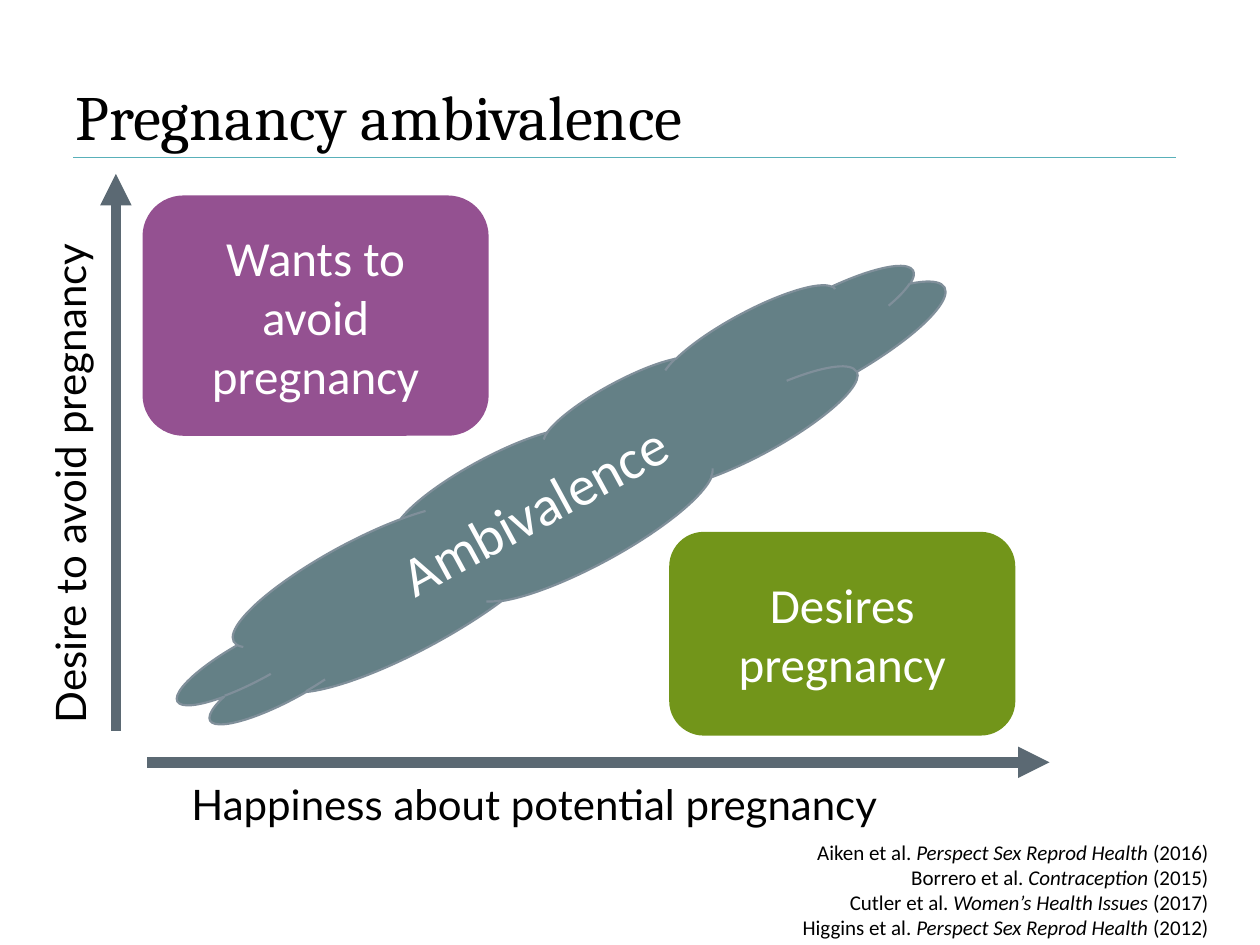
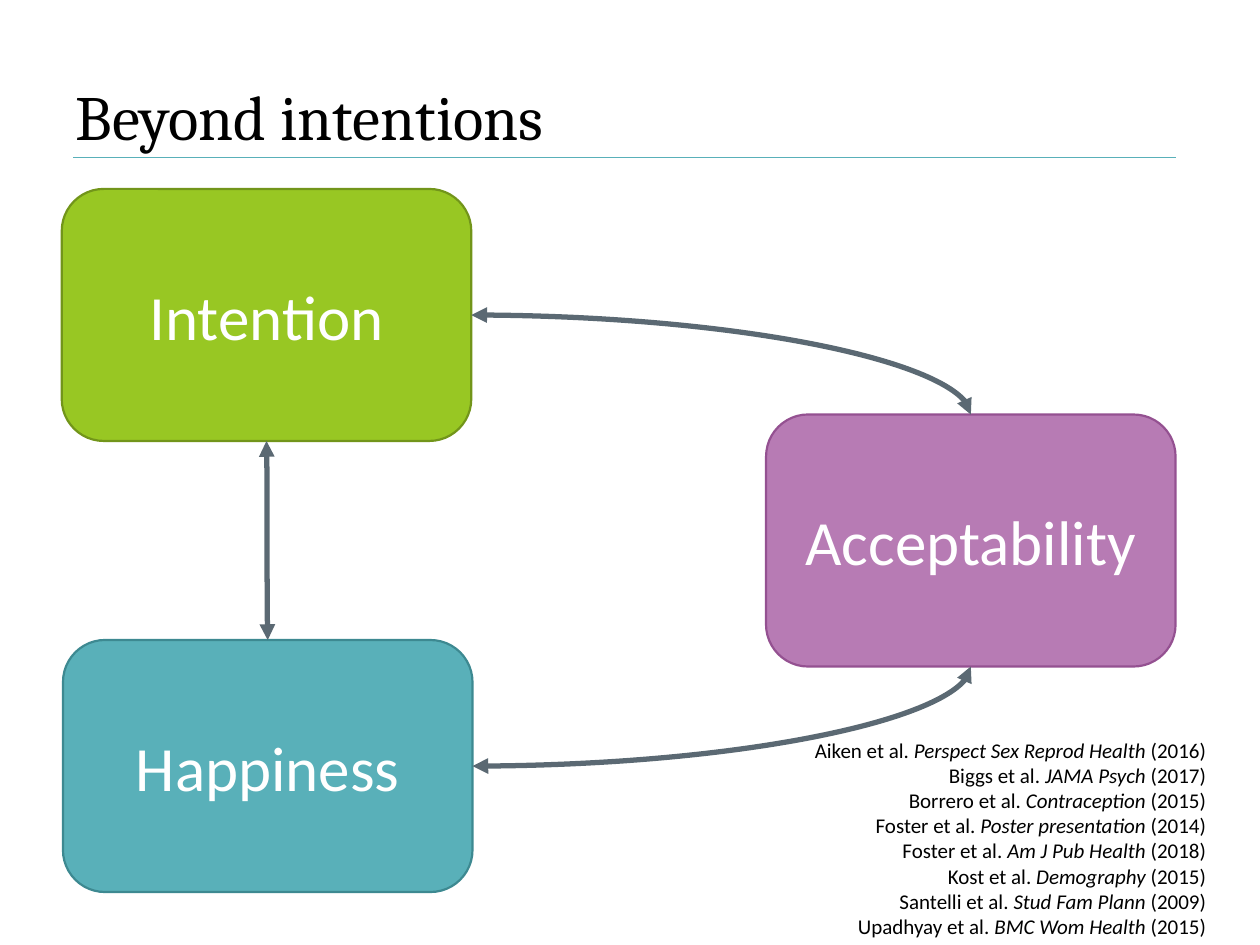
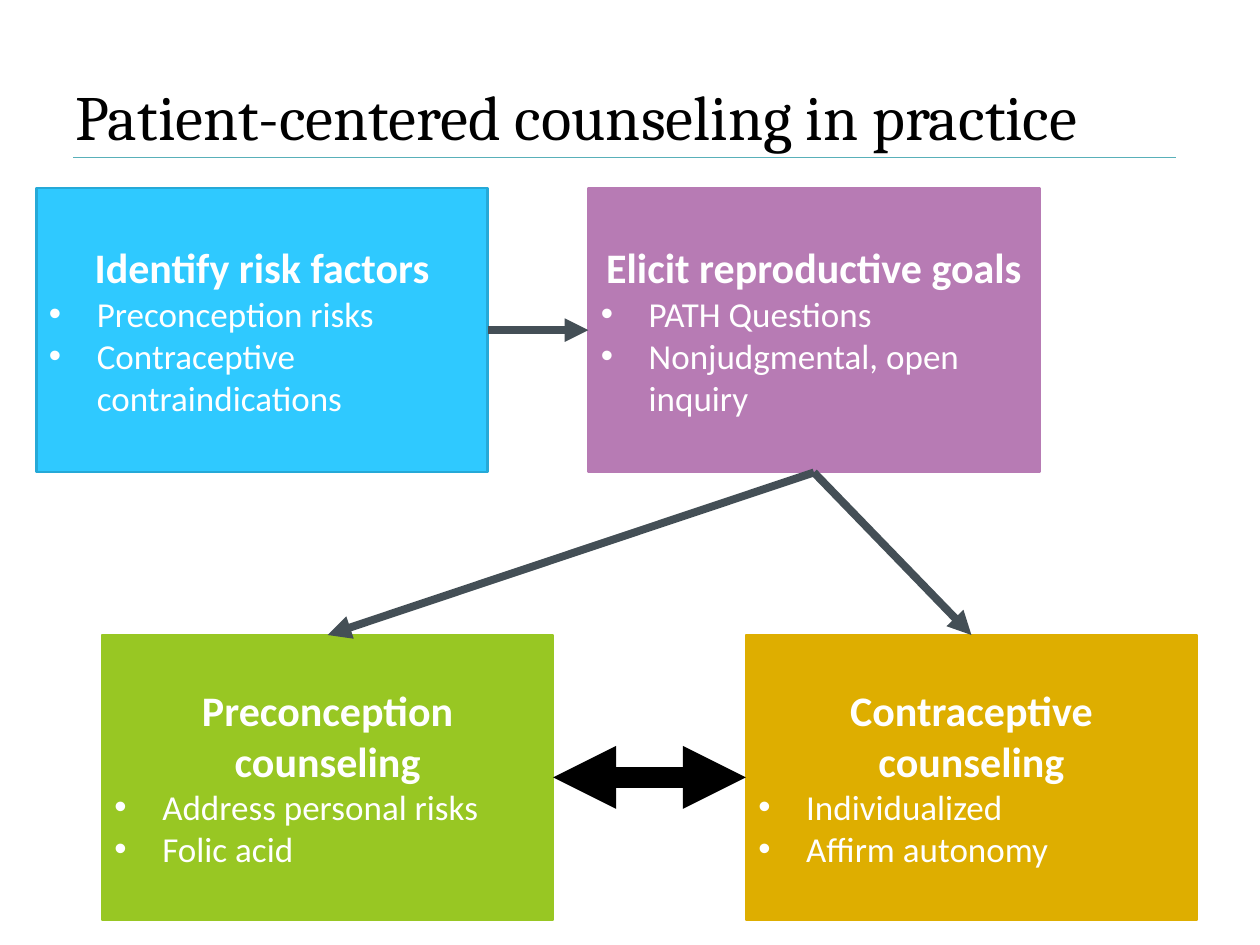
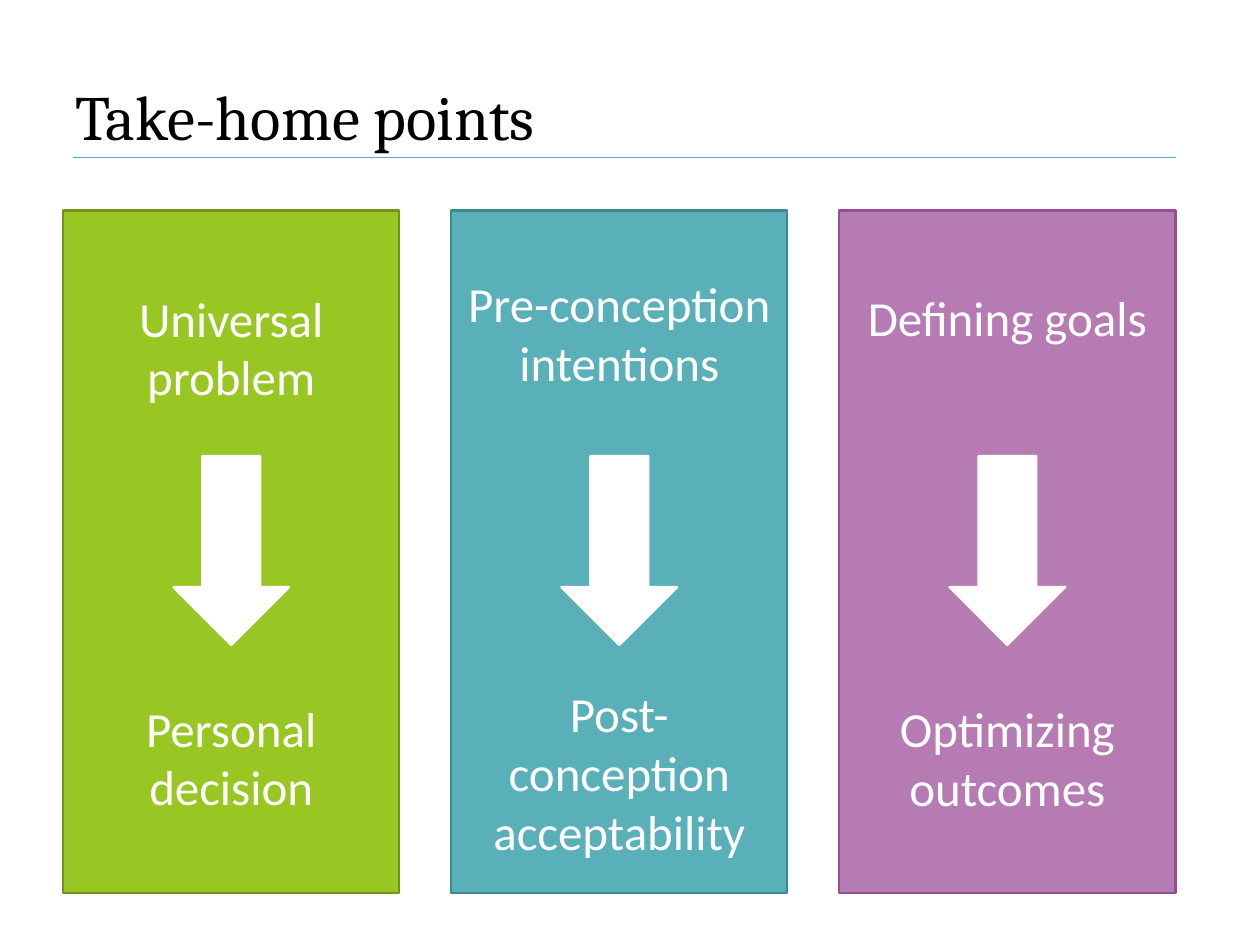
from lxml import etree
from pptx import Presentation
from pptx.dml.color import RGBColor
from pptx.enum.shapes import MSO_CONNECTOR, MSO_SHAPE
from pptx.enum.text import MSO_ANCHOR, MSO_AUTO_SIZE, PP_ALIGN
from pptx.oxml.ns import qn
from pptx.util import Inches, Pt

LEFT, CENTER, RIGHT = PP_ALIGN.LEFT, PP_ALIGN.CENTER, PP_ALIGN.RIGHT
TOP, MIDDLE, BOTTOM = MSO_ANCHOR.TOP, MSO_ANCHOR.MIDDLE, MSO_ANCHOR.BOTTOM
FIT_SHAPE = MSO_AUTO_SIZE.SHAPE_TO_FIT_TEXT
STRAIGHT, CURVE = MSO_CONNECTOR.STRAIGHT, MSO_CONNECTOR.CURVE
RECTANGLE, ROUNDED = MSO_SHAPE.RECTANGLE, MSO_SHAPE.ROUNDED_RECTANGLE
CLOUD, DOWN_ARROW = MSO_SHAPE.CLOUD, MSO_SHAPE.DOWN_ARROW

# Connection sites of a rectangle
SITE_TOP, SITE_LEFT, SITE_BOTTOM, SITE_RIGHT = range(4)

TITLE_FONT, BODY_FONT, AXIS_FONT = "Cambria", "Calibri", "Lato"
TITLE_ONLY_LAYOUT = 5

BLACK, WHITE = "000000", "FFFFFF"
GREEN, DARK_GREEN, OLIVE = "98C723", "72951A", "70931A"
TEAL, DARK_TEAL = "59B0B9", "3D8991"
PURPLE, DARK_PURPLE = "B77BB4", "945191"
BLUE, DARK_BLUE = "2FC9FF", "26A9D7"
GOLD = "DEAE00"
CLOUD_FILL, CLOUD_LINE = "648086", "808F9A"
SLATE, DARK_SLATE = "5B6973", "444F56"


def color(hex_string):
    return RGBColor.from_string(hex_string)


def box(left, top, width, height):
    return Inches(left), Inches(top), Inches(width), Inches(height)


class Deck:
    """Holds the shared style and the slide being built."""

    def __init__(self):
        self.presentation = Presentation()
        self.presentation.slide_width = Inches(10)
        self.presentation.slide_height = Inches(7.5)
        self.layout = self.presentation.slide_layouts[TITLE_ONLY_LAYOUT]
        self.slide = None
        self.has_rule = False

    def new_slide(self, title):
        self.slide = self.presentation.slides.add_slide(self.layout)
        if not self.has_rule:
            self.add_title_rule()
        shape = self.slide.shapes.title
        shape.left, shape.top, shape.width, shape.height = box(0.5, 0.5, 8.83, 0.83)
        shape.text_frame.vertical_anchor = MIDDLE
        self.add_paragraph(shape.text_frame, [title], 36, BLACK, LEFT, TITLE_FONT)

    def add_title_rule(self):
        """Put the line under the title on the layout, for all slides."""
        rule = self.line((0.58, 1.25), (9.33, 1.25), TEAL, 0.75, tail=False)
        self.layout.shapes.element.append(rule.element)
        self.has_rule = True

    def add_paragraph(self, frame, runs, size, text_color, align, font=BODY_FONT,
                      bold=False, italics=(), bullet=False, space_before=0):
        """Add one paragraph; italics holds the positions of italic runs."""
        paragraph = frame.paragraphs[0]
        if paragraph.runs:
            paragraph = frame.add_paragraph()
        paragraph.alignment = align
        if space_before:
            paragraph.space_before = Pt(space_before)
        if bullet:
            properties = paragraph._p.get_or_add_pPr()
            properties.set("marL", str(Inches(0.38)))
            properties.set("indent", str(-Inches(0.38)))
            etree.SubElement(properties, qn("a:buFont"), typeface="Arial")
            etree.SubElement(properties, qn("a:buChar"), char="•")
        for position, text in enumerate(runs):
            run = paragraph.add_run()
            run.text = text
            run.font.name = font
            run.font.size = Pt(size)
            run.font.bold = bold
            run.font.italic = position in italics
            run.font.color.rgb = color(text_color)

    def shape(self, kind, place, fill, outline=None, text=None, size=28, rotation=0):
        shape = self.slide.shapes.add_shape(kind, *box(*place))
        shape.shadow.inherit = False
        shape.rotation = rotation
        shape.fill.solid()
        shape.fill.fore_color.rgb = color(fill)
        shape.line.color.rgb = color(outline or fill)
        shape.line.width = Pt(1.25)
        shape.text_frame.word_wrap = True
        shape.text_frame.vertical_anchor = MIDDLE
        if text:
            self.add_paragraph(shape.text_frame, [text], size, WHITE, CENTER)
        return shape

    def card(self, place, fill, heading, points, outline=None):
        shape = self.shape(RECTANGLE, place, fill, outline)
        self.add_paragraph(shape.text_frame, [heading], 24, WHITE, CENTER, bold=True)
        for point in points:
            self.add_paragraph(shape.text_frame, [point], 20, WHITE, LEFT, bullet=True)
        return shape

    def label(self, place, text, rotation=0):
        text_box = self.slide.shapes.add_textbox(*box(*place))
        text_box.rotation = rotation
        text_box.text_frame.word_wrap = True
        text_box.text_frame.auto_size = FIT_SHAPE
        self.add_paragraph(text_box.text_frame, [text], 24, BLACK, LEFT, AXIS_FONT)

    def citations(self, place, sources):
        text_box = self.slide.shapes.add_textbox(*box(*place))
        frame = text_box.text_frame
        frame.word_wrap = False
        frame.auto_size = FIT_SHAPE
        frame.vertical_anchor = BOTTOM
        for author, journal, year in sources:
            runs = [f"{author} et al. ", journal, f" ({year})"]
            self.add_paragraph(frame, runs, 12, BLACK, RIGHT, italics=(1,))

    def line(self, start, end, line_color, width, head=False, tail=True, kind=STRAIGHT):
        connector = self.slide.shapes.add_connector(
            kind, *(Inches(value) for value in (*start, *end)))
        connector.line.color.rgb = color(line_color)
        connector.line.width = Pt(width)
        properties = connector.element.spPr
        outline = properties.find(qn("a:ln"))
        for tag, wanted in (("a:headEnd", head), ("a:tailEnd", tail)):
            if wanted:
                etree.SubElement(outline, qn(tag), type="triangle")
        etree.SubElement(properties, qn("a:effectLst"))
        return connector

    def link(self, start, start_site, end, end_site, line_color, width,
             head=False, kind=STRAIGHT, quarter=False):
        """Join two shapes; quarter makes a curve with a single bend."""
        connector = self.line((0, 0), (0, 0), line_color, width, head, kind=kind)
        connector.begin_connect(start, start_site)
        connector.end_connect(end, end_site)
        if quarter:
            geometry = connector.element.spPr.find(qn("a:prstGeom"))
            geometry.set("prst", "curvedConnector2")


def build_ambivalence(deck):
    deck.new_slide("Pregnancy ambivalence")
    deck.citations((6.23, 6.6, 3.46, 0.91), [
        ("Aiken", "Perspect Sex Reprod Health", 2016),
        ("Borrero", "Contraception", 2015),
        ("Cutler", "Women’s Health Issues", 2017),
        ("Higgins", "Perspect Sex Reprod Health", 2012),
    ])
    deck.line((0.92, 5.8), (0.92, 1.38), SLATE, 6)
    deck.line((1.17, 6.05), (8.33, 6.05), SLATE, 6)
    deck.label((1.42, 6.13, 6.19, 0.47), "Happiness about potential pregnancy")
    deck.label((-1.67, 3.4, 4.41, 0.47), "Desire to avoid pregnancy", rotation=270)
    deck.shape(CLOUD, (1.01, 3.34, 6.91, 1.21), CLOUD_FILL, CLOUD_LINE,
               "Ambivalence", 32, rotation=331.5)
    deck.shape(ROUNDED, (1.14, 1.56, 2.73, 1.89), DARK_PURPLE,
               text="Wants to avoid pregnancy")
    deck.shape(ROUNDED, (5.32, 4.23, 2.73, 1.6), DARK_GREEN,
               text="Desires pregnancy")


def build_beyond_intentions(deck):
    deck.new_slide("Beyond intentions")
    size = (3.25, 2)
    intention = deck.shape(ROUNDED, (0.49, 1.5, *size), GREEN, DARK_GREEN,
                           "Intention", 36)
    happiness = deck.shape(ROUNDED, (0.5, 5.08, *size), TEAL, DARK_TEAL,
                           "Happiness", 36)
    acceptability = deck.shape(ROUNDED, (6.08, 3.29, *size), PURPLE, DARK_PURPLE,
                               "Acceptability", 36)
    for start, start_site, end, end_site, quarter in (
        (intention, SITE_BOTTOM, happiness, SITE_TOP, False),
        (intention, SITE_RIGHT, acceptability, SITE_TOP, True),
        (happiness, SITE_RIGHT, acceptability, SITE_BOTTOM, True),
    ):
        deck.link(start, start_site, end, end_site, SLATE, 3,
                  head=True, kind=CURVE, quarter=quarter)
    deck.citations((6.29, 5.78, 3.38, 1.72), [
        ("Aiken", "Perspect Sex Reprod Health", 2016),
        ("Biggs", "JAMA Psych", 2017),
        ("Borrero", "Contraception", 2015),
        ("Foster", "Poster presentation", 2014),
        ("Foster", "Am J Pub Health", 2018),
        ("Kost", "Demography", 2015),
        ("Santelli", "Stud Fam Plann", 2009),
        ("Upadhyay", "BMC Wom Health", 2015),
    ])


def build_counseling(deck):
    deck.new_slide("Patient-centered counseling in practice")
    size = (3.58, 2.26)
    top_row, bottom_row = 1.49, 5.04
    risks = deck.card((0.29, top_row, *size), BLUE, "Identify risk factors",
                      ["Preconception risks", "Contraceptive contraindications"],
                      DARK_BLUE)
    goals = deck.card((4.67, top_row, *size), PURPLE, "Elicit reproductive goals",
                      ["PATH Questions", "Nonjudgmental, open inquiry"])
    contraceptive = deck.card((5.92, bottom_row, *size), GOLD,
                              "Contraceptive counseling",
                              ["Individualized", "Affirm autonomy"])
    preconception = deck.card((0.81, bottom_row, *size), GREEN,
                              "Preconception counseling",
                              ["Address personal risks", "Folic acid"])
    deck.link(risks, SITE_RIGHT, goals, SITE_LEFT, DARK_SLATE, 4.5)
    for counseling in (contraceptive, preconception):
        deck.link(goals, SITE_BOTTOM, counseling, SITE_TOP, DARK_SLATE, 4.5)
    deck.link(preconception, SITE_RIGHT, contraceptive, SITE_LEFT, BLACK, 12, head=True)


def build_take_home(deck):
    deck.new_slide("Take-home points")
    first_left, pitch, width = 0.5, 3.08, 2.67
    arrow_width = 0.92
    columns = [
        (GREEN, OLIVE, "Universal problem", "Personal decision", 167),
        (TEAL, DARK_TEAL, "Pre-conception intentions",
         "Post-conception acceptability", 167),
        (PURPLE, DARK_PURPLE, "Defining goals", "Optimizing outcomes", 201),
    ]
    for index, (fill, outline, before, after, gap) in enumerate(columns):
        left = first_left + index * pitch
        column = deck.shape(RECTANGLE, (left, 1.67, width, 5.42), fill, outline, before)
        deck.add_paragraph(column.text_frame, [after], 28, WHITE, CENTER,
                           space_before=gap)
        if fill == TEAL:
            column.text_frame.vertical_anchor = TOP
            column.text_frame.margin_top = Inches(0.5)
        arrow_left = left + (width - arrow_width) / 2
        deck.shape(DOWN_ARROW, (arrow_left, 3.62, arrow_width, 1.5), WHITE)


def main():
    deck = Deck()
    build_ambivalence(deck)
    build_beyond_intentions(deck)
    build_counseling(deck)
    build_take_home(deck)
    deck.presentation.save("out.pptx")


if __name__ == "__main__":
    main()
